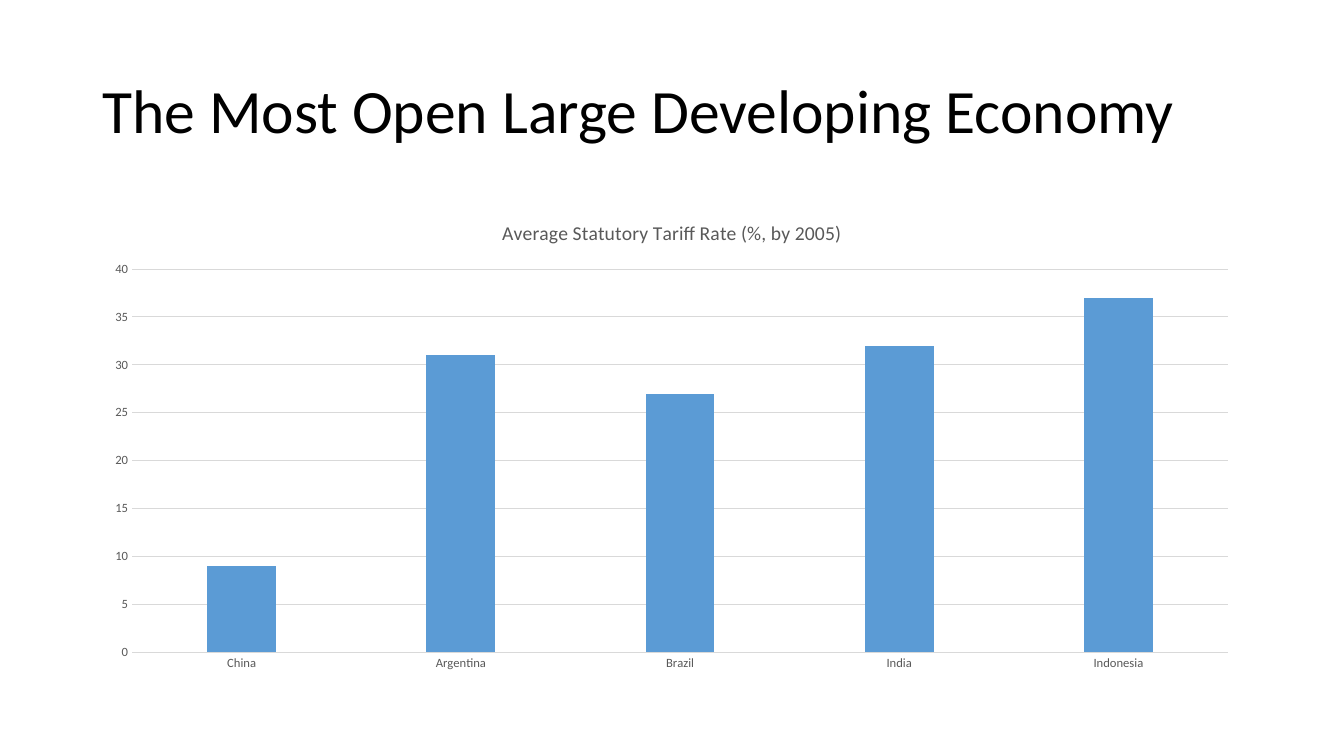
from lxml import etree
from pptx import Presentation
from pptx.chart.data import CategoryChartData as ChartData
from pptx.dml.color import RGBColor
from pptx.enum.chart import XL_CHART_TYPE as Kind, XL_TICK_MARK as Tick
from pptx.enum.text import MSO_ANCHOR as Anchor
from pptx.oxml.ns import qn
from pptx.util import Cm, Pt

BLACK = RGBColor(0x00, 0x00, 0x00)
GRAY = RGBColor(0x59, 0x59, 0x59)
RULE = RGBColor(0xD9, 0xD9, 0xD9)
BLUE = RGBColor(0x5B, 0x9B, 0xD5)
FACE = "Calibri"

TARIFFS = {
    "China": 9,
    "Argentina": 31,
    "Brazil": 27,
    "India": 32,
    "Indonesia": 37,
}


def set_font(font, size, color):
    font.name = FACE
    font.size = Pt(size)
    font.bold = False
    font.color.rgb = color


def set_line(line):
    line.color.rgb = RULE
    line.width = Pt(0.75)


def add_title(slide, box, text):
    frame = slide.shapes.add_textbox(*box).text_frame
    frame.word_wrap = True
    frame.vertical_anchor = Anchor.MIDDLE
    para = frame.paragraphs[0]
    para.text = text
    para.line_spacing = 0.9
    set_font(para.runs[0].font, 44, BLACK)


def place_plot(chart, x, y, w, h):
    """Fix the inner plot area, in fractions of the chart."""
    area = chart.plots[0]._element.getparent()
    for old in area.findall(qn("c:layout")):
        area.remove(old)
    layout = etree.Element(qn("c:layout"))
    area.insert(0, layout)
    manual = etree.SubElement(layout, qn("c:manualLayout"))
    parts = [("layoutTarget", "inner"), ("xMode", "edge"), ("yMode", "edge"),
             ("x", x), ("y", y), ("w", w), ("h", h)]
    for tag, val in parts:
        etree.SubElement(manual, qn(f"c:{tag}")).set("val", str(val))


def add_bars(slide, box, title, rates):
    data = ChartData()
    data.categories = list(rates)
    data.add_series("Series 1", list(rates.values()))
    chart = slide.shapes.add_chart(Kind.COLUMN_CLUSTERED, *box, data).chart
    set_font(chart.font, 10, BLACK)
    chart.has_legend = False
    chart.has_title = True
    para = chart.chart_title.text_frame.paragraphs[0]
    para.text = title
    set_font(para.runs[0].font, 14, GRAY)
    chart.chart_title.include_in_layout = False

    plot = chart.plots[0]
    plot.vary_by_categories = False
    plot.gap_width = 219
    plot.overlap = -27
    fill = plot.series[0].format.fill
    fill.solid()
    fill.fore_color.rgb = BLUE

    cats, vals = chart.category_axis, chart.value_axis
    for axis in (cats, vals):
        axis.major_tick_mark = axis.minor_tick_mark = Tick.NONE
        set_font(axis.tick_labels.font, 9, GRAY)
    set_line(cats.format.line)
    vals.format.line.fill.background()
    set_line(vals.major_gridlines.format.line)
    vals.minimum_scale, vals.maximum_scale, vals.major_unit = 0, 40, 5
    wide, high = box[2:]
    place_plot(chart, Cm(1) / wide, Cm(1.71) / high,
               Cm(27.62) / wide, Cm(9.66) / high)


def main():
    deck = Presentation()
    deck.slide_width, deck.slide_height = Cm(33.87), Cm(19.05)
    slide = deck.slides.add_slide(deck.slide_layouts[6])
    left, width = Cm(2.33), Cm(29.21)
    add_title(slide, (left, Cm(1.01), width, Cm(3.68)),
              "The Most Open Large Developing Economy")
    add_bars(slide, (left, Cm(5.07), width, Cm(12.09)),
             "Average Statutory Tariff Rate (%, by 2005)", TARIFFS)
    deck.save("out.pptx")


if __name__ == "__main__":
    main()
